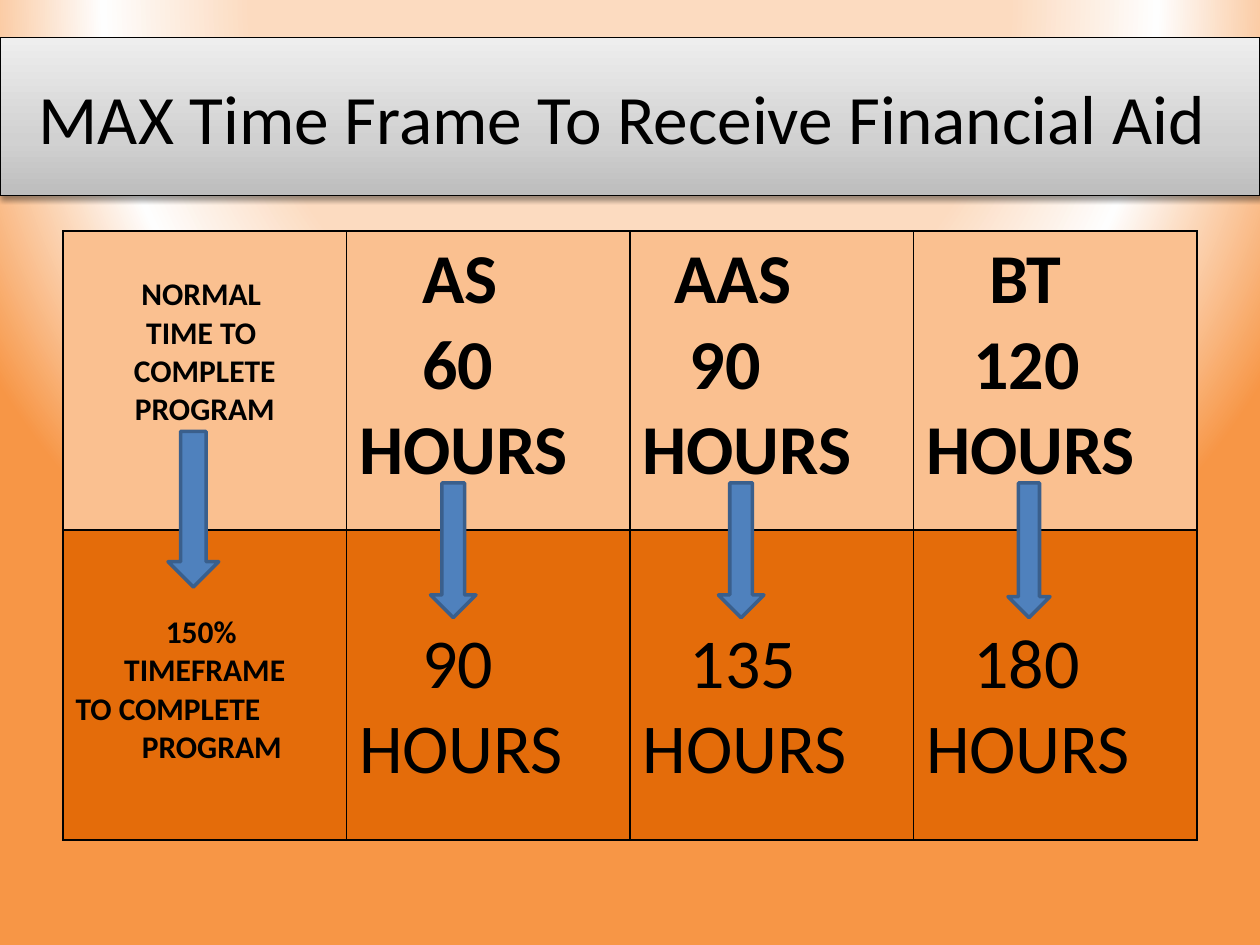
from dataclasses import dataclass
from pptx import Presentation
from pptx import oxml
from pptx.dml.color import RGBColor
from pptx.enum import shapes, text
from pptx.oxml import ns
from pptx.util import Pt


@dataclass(frozen=True)
class Theme:
    font: str = "Calibri"
    ink: str = "000000"
    light: str = "FAC090"
    dark: str = "E46C0A"
    arrow: str = "4F81BD"
    arrow_edge: str = "3A5F8C"
    backdrop: tuple = ((48, "FCDBC0"), (67, "FEFEFE"), (94, "F79646"))
    banner: tuple = ((0, "BDBDBD"), (35, "D1D1D1"), (100, "EEEEEE"))
    title_size: float = 39.6
    label_size: float = 18
    hours_size: float = 40


THEME = Theme()
CENTER = text.PP_ALIGN.CENTER
LEFT = text.PP_ALIGN.LEFT

LABELS = (
    (25.5, (("NORMAL ", CENTER, 0), ("TIME TO ", CENTER, 0),
            ("COMPLETE PROGRAM", CENTER, 0))),
    (47.5, (("150% ", CENTER, 0), ("TIMEFRAME", CENTER, 0),
            ("TO COMPLETE", LEFT, 0), ("PROGRAM", CENTER, 8))),
)
PROGRAMS = (
    ("AS", 36, "60 HOURS", 36, "90", 36),
    ("AAS", 18, "90 HOURS", 27, "135", 27),
    ("BT", 36, "120 HOURS", 27, "180", 27),
)
ARROWS = ((60, 114.5, 29, 89), (210, 144, 26, 77),
          (374.5, 144, 26, 77), (540, 144, 24, 77))


def rgb(color):
    return RGBColor.from_string(color)


def xml(markup):
    tag, rest = markup.split(maxsplit=1) if " " in markup.split(">")[0] else (markup, "")
    if not rest:
        tag, rest = markup.split(">", 1)
        rest = ">" + rest
    return oxml.parse_xml(f"{tag} {ns.nsdecls('a')} {rest}")


def apply(target, values):
    for name, value in values.items():
        setattr(target, name, value)


def place(item, box):
    names = ("left", "top", "width", "height")
    apply(item, {name: Pt(value) for name, value in zip(names, box)})


def set_gradient(owner, fill, stops, shade):
    fill.gradient()
    old = owner.find(".//" + ns.qn("a:gradFill"))
    marks = "".join(
        f'<a:gs pos="{position * 1000}"><a:srgbClr val="{color}"/></a:gs>'
        for position, color in stops)
    new = xml(f'<a:gradFill rotWithShape="1"><a:gsLst>{marks}</a:gsLst>{shade}</a:gradFill>')
    old.getparent().replace(old, new)


def write(para, words, size, bold, align=LEFT, first=0, left=0):
    para.alignment = align
    props = para._p.get_or_add_pPr()
    props.set("marL", str(Pt(left)))
    props.set("indent", str(Pt(first)))
    span = para.add_run()
    span.text = words
    apply(span.font, {"name": THEME.font, "size": Pt(size), "bold": bold})
    span.font.color.rgb = rgb(THEME.ink)


def add_backdrop(page):
    shade = ('<a:path path="circle"><a:fillToRect l="50000" t="-80000" '
             'r="50000" b="180000"/></a:path>')
    set_gradient(page.element, page.background.fill, THEME.backdrop, shade)


def add_title(page, box):
    title = page.shapes.title
    place(title, box)
    set_gradient(title.element.spPr, title.fill, THEME.banner,
                 '<a:lin ang="16200000" scaled="0"/>')
    title.line.color.rgb = rgb(THEME.ink)
    title.line.width = Pt(0.75)
    title.element.spPr.append(xml(
        f'<a:effectLst><a:outerShdw blurRad="{Pt(3.1)}" dist="{Pt(1.6)}" '
        f'dir="5400000" rotWithShape="0"><a:srgbClr val="{THEME.ink}">'
        '<a:alpha val="38000"/></a:srgbClr></a:outerShdw></a:effectLst>'))
    apply(title.text_frame, {"word_wrap": True,
                             "vertical_anchor": text.MSO_ANCHOR.MIDDLE})
    write(title.text_frame.paragraphs[0], "MAX Time Frame To Receive Financial Aid ",
          THEME.title_size, False, CENTER)


def format_cell(cell, color, top):
    apply(cell, {"margin_top": Pt(top), "vertical_anchor": text.MSO_ANCHOR.TOP})
    cell.fill.solid()
    cell.fill.fore_color.rgb = rgb(color)
    props = cell._tc.get_or_add_tcPr()
    for index, side in enumerate("LRTB"):
        props.insert(index, xml(
            f'<a:ln{side} w="{Pt(1)}"><a:solidFill><a:srgbClr val="{THEME.ink}"/>'
            f'</a:solidFill></a:ln{side}>'))


def fill_cell(cell, color, top, size, bold, lines):
    format_cell(cell, color, top)
    for index, (words, align, first, left) in enumerate(lines):
        frame = cell.text_frame
        para = frame.add_paragraph() if index else frame.paragraphs[0]
        write(para, words, size, bold, align, first, left)


def add_hours_table(page, box, row_heights):
    table = page.shapes.add_table(2, 4, *map(Pt, box)).table
    apply(table, {"first_row": False, "horz_banding": False})
    for column in table.columns:
        column.width = Pt(box[2] / 4)
    for row, height in zip(table.rows, row_heights):
        row.height = Pt(height)
    for row, (color, (top, lines)) in enumerate(zip((THEME.light, THEME.dark), LABELS)):
        fill_cell(table.cell(row, 0), color, top, THEME.label_size, True,
                  [(words, align, 0, left) for words, align, left in lines])
    for column, (name, name_in, normal, normal_in, limit, limit_in) in enumerate(PROGRAMS, 1):
        fill_cell(table.cell(0, column), THEME.light, 3.6, THEME.hours_size, True,
                  [(name, LEFT, name_in, 0), (normal, LEFT, normal_in, 0)])
        fill_cell(table.cell(1, column), THEME.dark, 52.4, THEME.hours_size, False,
                  [(limit, LEFT, limit_in, 0), ("HOURS", LEFT, 0, 0)])


def add_arrows(page, box):
    for left, top, width, height in ARROWS:
        arrow = page.shapes.add_shape(
            shapes.MSO_SHAPE.DOWN_ARROW, Pt(box[0] + left), Pt(box[1] + top),
            Pt(width), Pt(height))
        arrow.shadow.inherit = False
        arrow.fill.solid()
        arrow.fill.fore_color.rgb = rgb(THEME.arrow)
        arrow.line.color.rgb = rgb(THEME.arrow_edge)
        arrow.line.width = Pt(2)


def main():
    deck = Presentation()
    apply(deck, {"slide_width": Pt(720), "slide_height": Pt(540)})
    page = deck.slides.add_slide(deck.slide_layouts[5])
    table_box = (36, 132, 648, 348)
    add_backdrop(page)
    add_title(page, (0, 21.6, 720, 90))
    add_hours_table(page, table_box, (171, 177))
    add_arrows(page, table_box)
    deck.save("out.pptx")


if __name__ == "__main__":
    main()
